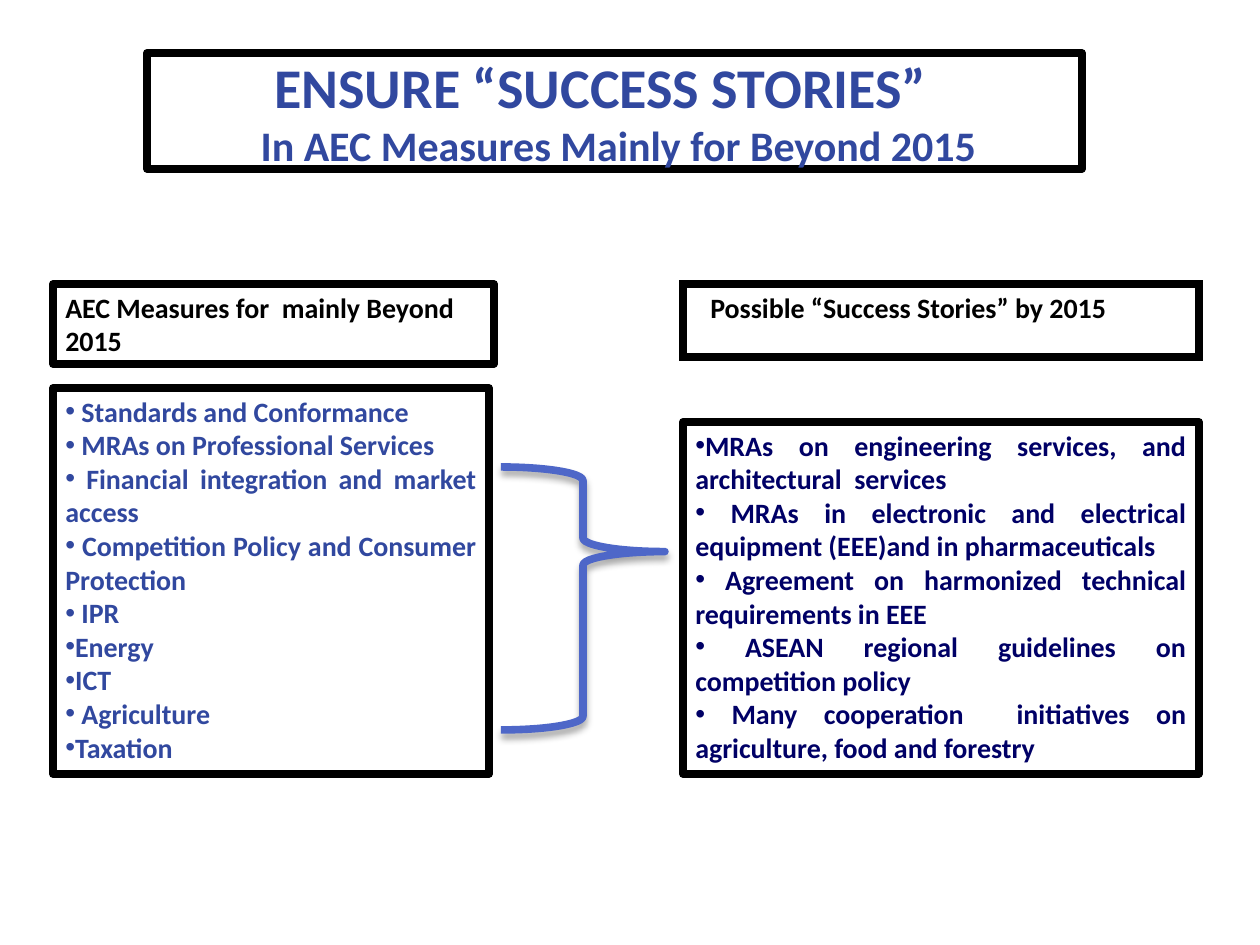
"""Build the slide on AEC measures and their possible success stories."""
import lxml.etree
import pptx
import pptx.dml.color
import pptx.enum.shapes
import pptx.enum.text
import pptx.oxml.ns
import pptx.util

ALIGN = pptx.enum.text.PP_ALIGN
ANCHOR = pptx.enum.text.MSO_ANCHOR
AUTO_SIZE = pptx.enum.text.MSO_AUTO_SIZE
SHAPE = pptx.enum.shapes.MSO_SHAPE

BLACK, BLUE, NAVY, BRACE_BLUE = "000000", "31489F", "000066", "4E67C8"
LINE_WIDTH = 4.33
LEFT, RIGHT, HEADER_TOP = 53, 683, 284

TITLE_BOX = (147, 53, 935, 116)
TITLE_LINES = [
    {"text": "ENSURE “SUCCESS STORIES”", "size": 32, "right": 28},
    {"text": "In AEC Measures Mainly for Beyond 2015", "size": 24, "left": 8},
]
MEASURES_HEADER = "AEC Measures for  mainly Beyond 2015"
STORIES_HEADER = "Possible “Success Stories” by 2015"
MEASURES = [
    " Standards and Conformance",
    " MRAs on Professional Services",
    " Financial integration and market access",
    " Competition Policy and Consumer Protection",
    " IPR",
    "Energy",
    "ICT",
    " Agriculture",
    "Taxation",
]
STORIES = [
    "MRAs on engineering services, and architectural  services",
    " MRAs in electronic and electrical equipment (EEE)and in pharmaceuticals",
    " Agreement on harmonized technical requirements in EEE",
    " ASEAN regional guidelines on competition policy",
    " Many cooperation  initiatives on agriculture, food and forestry",
]


def px(length):
    return pptx.util.Emu(round(length * 914400 / 126))


def color(value):
    return pptx.dml.color.RGBColor.from_string(value)


def add_child(parent, tag, **attributes):
    child = lxml.etree.SubElement(parent, pptx.oxml.ns.qn(tag))
    for name, value in attributes.items():
        child.set(name, str(value))
    return child


def add_outlined(slide, kind, box, line_color, join="a:round"):
    shape = slide.shapes.add_shape(kind, *map(px, box))
    shape.shadow.inherit = False
    shape.line.color.rgb = color(line_color)
    shape.line.width = pptx.util.Pt(LINE_WIDTH)
    add_child(shape.line._get_or_add_ln(), join)
    return shape


def add_box(slide, box, lines, text_color, align=ALIGN.LEFT, anchor=ANCHOR.TOP,
            bullet=False, grow=False, join="a:round"):
    shape = add_outlined(slide, SHAPE.RECTANGLE, box, BLACK, join)
    shape.fill.solid()
    shape.fill.fore_color.rgb = color("FFFFFF")
    frame = shape.text_frame
    frame.word_wrap = True
    frame.vertical_anchor = anchor
    frame.auto_size = AUTO_SIZE.SHAPE_TO_FIT_TEXT if grow else AUTO_SIZE.NONE
    for index, line in enumerate(lines):
        paragraph = frame.paragraphs[0] if index == 0 else frame.add_paragraph()
        paragraph.text = line["text"]
        paragraph.alignment = align
        properties = paragraph._p.get_or_add_pPr()
        for name, key in (("marL", "left"), ("marR", "right"), ("indent", "indent")):
            properties.set(name, str(px(line.get(key, 0))))
        if bullet:
            add_child(properties, "a:buFont", typeface="Arial")
            add_child(properties, "a:buChar", char="•")
        paragraph.font.name = "Calibri"
        paragraph.font.size = pptx.util.Pt(line.get("size", 16))
        paragraph.font.bold = True
        paragraph.font.color.rgb = color(text_color)


def add_brace(slide, box):
    brace = add_outlined(slide, SHAPE.RIGHT_BRACE, box, BRACE_BLUE)
    brace.fill.background()
    brace.adjustments[0] = 0.083
    brace.adjustments[1] = 0.322
    effects = brace._element.spPr.find(pptx.oxml.ns.qn("a:effectLst"))
    shadow = add_child(effects, "a:outerShdw", blurRad=pptx.util.Pt(4),
                       dist=pptx.util.Pt(3), dir=90 * 60000, rotWithShape=0)
    add_child(add_child(shadow, "a:srgbClr", val=BLACK), "a:alpha", val=35000)


def add_list(slide, box, items, text_color):
    add_box(slide, box, [{"text": item} for item in items], text_color,
            align=ALIGN.JUSTIFY, bullet=True, grow=True)


def main():
    presentation = pptx.Presentation()
    presentation.slide_width, presentation.slide_height = px(1260), px(945)
    slide = presentation.slides.add_slide(presentation.slide_layouts[6])
    add_box(slide, TITLE_BOX, TITLE_LINES, BLUE, ALIGN.CENTER, ANCHOR.MIDDLE)
    add_box(slide, (RIGHT, HEADER_TOP, 516, 73),
            [{"text": STORIES_HEADER, "left": 50, "indent": -35}], BLACK, join="a:miter")
    add_brace(slide, (501, 467, 164, 263))
    add_list(slide, (RIGHT, 422, 516, 352), STORIES, NAVY)
    add_list(slide, (LEFT, 388, 436, 386), MEASURES, BLUE)
    add_box(slide, (LEFT, HEADER_TOP, 441, 80), [{"text": MEASURES_HEADER}], BLACK, grow=True)
    presentation.save("out.pptx")


if __name__ == "__main__":
    main()
